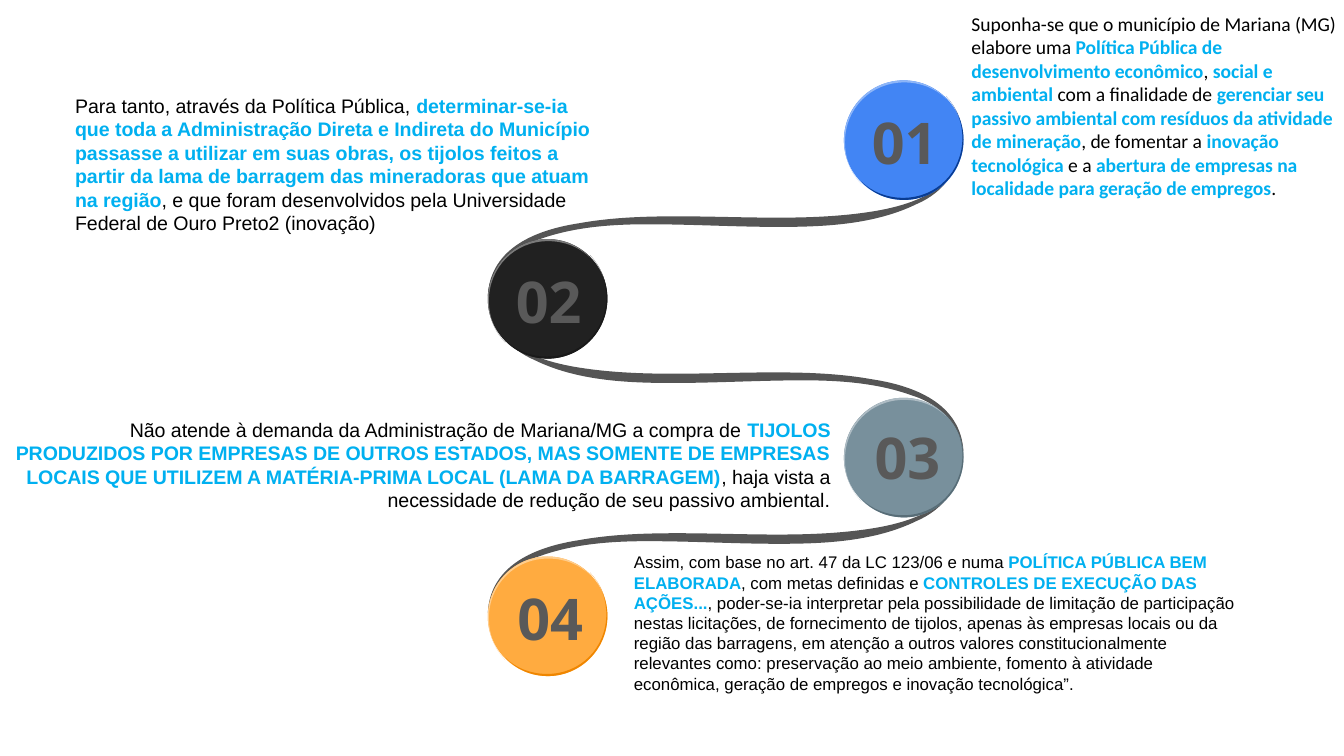
from pptx import Presentation
from pptx.dml.color import RGBColor
from pptx.enum.shapes import MSO_SHAPE
from pptx.enum.text import MSO_AUTO_SIZE, PP_ALIGN
from pptx.oxml.ns import qn
from pptx.util import Cm, Pt

BLACK = RGBColor(0x00, 0x00, 0x00)
CYAN = RGBColor(0x00, 0xB0, 0xF0)
GRAY = RGBColor(0x59, 0x59, 0x59)
ROAD_GRAY = RGBColor(0x55, 0x55, 0x55)
BLUE, NAVY, SKY = RGBColor(0x42, 0x85, 0xF4), RGBColor(0x09, 0x3C, 0x92), RGBColor(0x8E, 0xB6, 0xF8)
INK, COAL, ASH = RGBColor(0x21, 0x21, 0x21), RGBColor(0x19, 0x19, 0x19), RGBColor(0x7A, 0x7A, 0x7A)
SLATE, STEEL, MIST = RGBColor(0x78, 0x90, 0x9C), RGBColor(0x58, 0x6D, 0x77), RGBColor(0xAE, 0xBC, 0xC4)
ORANGE, RUST, PEACH = RGBColor(0xFF, 0xAB, 0x40), RGBColor(0xEF, 0x86, 0x00), RGBColor(0xFF, 0xCD, 0x8C)

DIAMETER = 2.26
COLUMNS = (15.95, 9.22)
TOP, STEP = 1.52, 3.0

STEPS = [
    ("01", (BLUE, NAVY, SKY), (0.5, 0.51)),
    ("02", (INK, COAL, ASH), (0.5, 0.51)),
    ("03", (SLATE, STEEL, MIST), (0.55, 0.46)),
    ("04", (ORANGE, RUST, PEACH), (0.53, 0.51)),
]

TEXTS = [
    ((18.11, 0.1, 7.44, 3.84), "Calibri", 10.5, PP_ALIGN.LEFT, [
        "Suponha-se que o município de Mariana (MG) elabore uma ",
        "Política Pública de desenvolvimento econômico", ", ",
        "social e ambiental ", "com a finalidade de ",
        "gerenciar seu passivo ambiental com resíduos da atividade de mineração",
        ", de fomentar a ", "inovação tecnológica ", "e a ",
        "abertura de empresas na localidade para geração de empregos", "."]),
    ((1.17, 1.65, 10.29, 2.95), "Arial", 10.5, PP_ALIGN.LEFT, [
        "Para tanto, através da Política Pública, ",
        "determinar-se-ia que toda a Administração Direta e Indireta do Município "
        "passasse a utilizar em suas obras, os tijolos feitos a partir da lama de "
        "barragem das mineradoras que atuam na região",
        ", e que foram desenvolvidos pela Universidade Federal de Ouro Preto2 (inovação)"]),
    ((-0.13, 7.77, 16.08, 2.06), "Arial", 10.5, PP_ALIGN.RIGHT, [
        "Não atende à demanda da Administração de Mariana/MG a compra de ",
        "TIJOLOS PRODUZIDOS POR EMPRESAS DE OUTROS ESTADOS, MAS SOMENTE DE EMPRESAS "
        "LOCAIS QUE UTILIZEM A MATÉRIA-PRIMA LOCAL (LAMA DA BARRAGEM)",
        ", haja vista a necessidade de redução de seu passivo ambiental."]),
    ((11.73, 10.31, 11.94, 2.95), "Arial", 9, PP_ALIGN.LEFT, [
        "Assim, com base no art. 47 da LC 123/06 e numa ",
        "POLÍTICA PÚBLICA BEM ELABORADA", ", com metas definidas e ",
        "CONTROLES DE EXECUÇÃO DAS AÇÕES...",
        ", poder-se-ia interpretar pela possibilidade de limitação de participação "
        "nestas licitações, de fornecimento de tijolos, apenas às empresas locais ou "
        "da região das barragens, em atenção a outros valores constitucionalmente "
        "relevantes como: preservação ao meio ambiente, fomento à atividade econômica, "
        "geração de empregos e inovação tecnológica”."]),
]

BEND = [
    (18.21, 2.59), (18.16, 3.28), (17.78, 3.78), (16.54, 3.99),
    (15.34, 4.19), (14.07, 4.09), (12.8, 4.09),
    (12.19, 4.09), (11.56, 4.11), (10.95, 4.22),
    (10.16, 4.34), (9.27, 4.67), (9.22, 5.59),
    (9.35, 4.95), (9.78, 4.65), (10.21, 4.52),
    (10.85, 4.29), (11.56, 4.24), (12.24, 4.24),
    (13.08, 4.24), (13.89, 4.29), (14.73, 4.29),
    (15.62, 4.29), (16.54, 4.24), (17.32, 3.86),
    (17.86, 3.63), (18.16, 3.18), (18.21, 2.59),
]
MIRROR = 27.43
CRESCENT = [
    (1.93, 0.3), (2.13, 0.51), (2.24, 0.79), (2.24, 1.09),
    (2.24, 1.73), (1.75, 2.22), (1.12, 2.22),
    (0.81, 2.22), (0.53, 2.11), (0.33, 1.91),
    (0.53, 2.13), (0.81, 2.26), (1.14, 2.26),
    (1.75, 2.26), (2.26, 1.75), (2.26, 1.12),
    (2.26, 0.81), (2.13, 0.51), (1.93, 0.3),
]


def paint(sp, color):
    sp.shadow.inherit = False
    sp.fill.solid()
    sp.fill.fore_color.rgb = color
    sp.line.fill.background()


def bend_lines(sp):
    lines = sp._element.findall(".//" + qn("a:lnTo"))
    for i in range(0, len(lines), 3):
        curve, *rest = lines[i:i + 3]
        curve.tag = qn("a:cubicBezTo")
        for line in rest:
            curve.append(line[0])
            line.getparent().remove(line)


def add_outline(shapes, contours, color):
    first, *others = [[(Cm(x), Cm(y)) for x, y in c] for c in contours]
    builder = shapes.build_freeform(*first[0])
    builder.add_line_segments(first[1:], close=True)
    for points in others:
        builder.move_to(*points[0])
        builder.add_line_segments(points[1:], close=True)
    sp = builder.convert_to_shape()
    bend_lines(sp)
    paint(sp, color)


def add_ball(shapes, x, y, colors):
    face, shade, highlight = colors
    group = shapes.add_group_shape().shapes
    paint(group.add_shape(MSO_SHAPE.OVAL, Cm(x), Cm(y), Cm(DIAMETER), Cm(DIAMETER)), face)
    add_outline(group, [[(x + px, y + py) for px, py in CRESCENT]], shade)
    add_outline(group, [[(x + DIAMETER - px, y + DIAMETER - py) for px, py in CRESCENT]], highlight)


def add_text(shapes, box, font, size, align, parts):
    tf = shapes.add_textbox(*[Cm(v) for v in box]).text_frame
    tf.word_wrap = True
    tf.auto_size = MSO_AUTO_SIZE.SHAPE_TO_FIT_TEXT
    p = tf.paragraphs[0]
    p.alignment = align
    for i, part in enumerate(parts):
        r = p.add_run()
        r.text = part
        r.font.name, r.font.size = font, Pt(size)
        r.font.bold = i % 2 == 1
        r.font.color.rgb = CYAN if i % 2 else BLACK
    return tf


def add_number(shapes, x, y, number):
    tf = add_text(shapes, (x, y, 1.3, 1.32), "Open Sans", 30.8, PP_ALIGN.CENTER, [number])
    tf.word_wrap = False
    tf.margin_left = tf.margin_right = tf.margin_top = tf.margin_bottom = 0
    font = tf.paragraphs[0].runs[0].font
    font.bold = True
    font.color.rgb = GRAY


def main():
    prs = Presentation()
    prs.slide_width, prs.slide_height = Cm(25.4), Cm(14.29)
    shapes = prs.slides.add_slide(prs.slide_layouts[6]).shapes

    add_outline(shapes, [
        BEND,
        [(MIRROR - x, y + 2.95) for x, y in BEND],
        [(x, y + 5.99) for x, y in BEND],
    ], ROAD_GRAY)

    places = [(COLUMNS[i % 2], TOP + i * STEP) for i in range(len(STEPS))]
    for (x, y), (_, colors, _) in zip(places, STEPS):
        add_ball(shapes, x, y, colors)
    for (x, y), (number, _, (dx, dy)) in zip(places, STEPS):
        add_number(shapes, x + dx, y + dy, number)
    for text in TEXTS:
        add_text(shapes, *text)

    prs.save("out.pptx")


if __name__ == "__main__":
    main()
